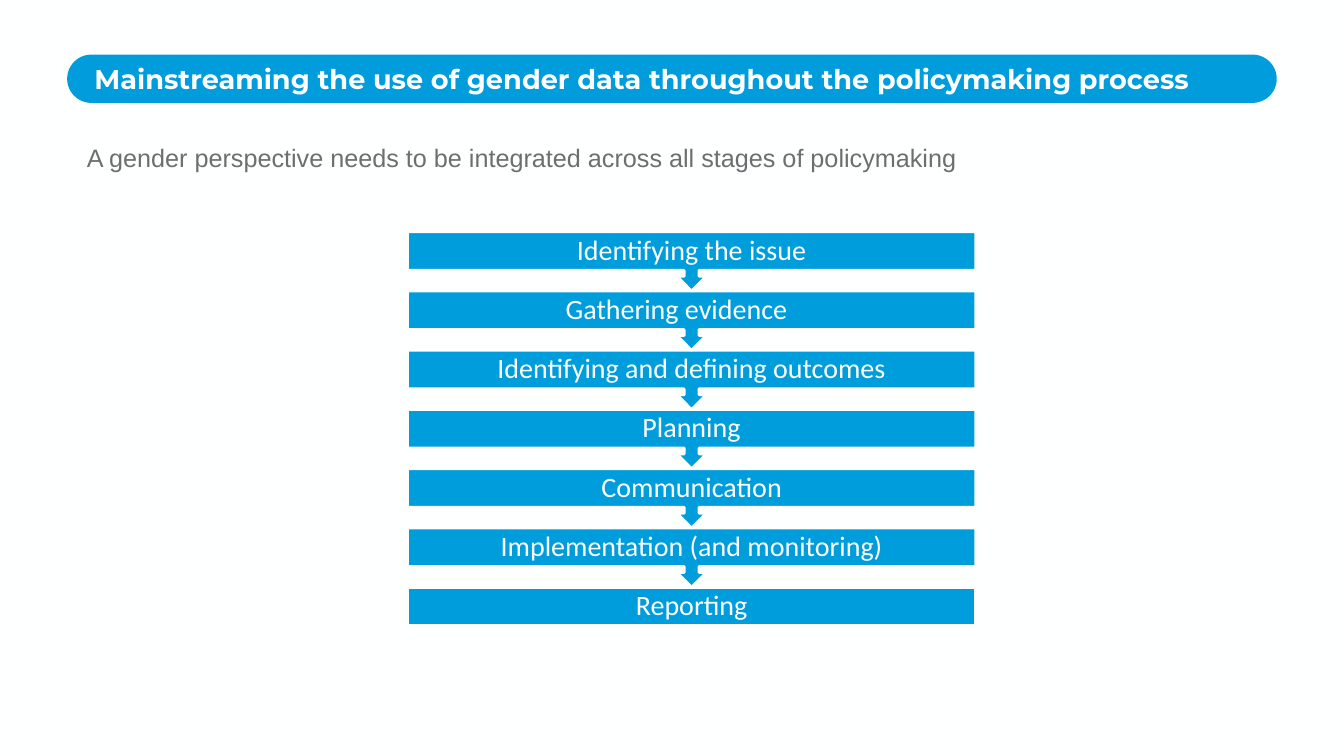
from dataclasses import dataclass

from pptx import Presentation
from pptx.dml.color import RGBColor
from pptx.enum.shapes import MSO_SHAPE
from pptx.enum.text import MSO_ANCHOR, PP_ALIGN
from pptx.util import Pt


@dataclass(frozen=True)
class Theme:
    """Colours, fonts and type sizes of the slide."""
    white: RGBColor = RGBColor(0xFE, 0xFF, 0xFF)
    bar: RGBColor = RGBColor(0x00, 0x9C, 0xDB)
    step: RGBColor = RGBColor(0x00, 0x9D, 0xDC)
    grey: RGBColor = RGBColor(0x6D, 0x6E, 0x70)
    title_font: str = "Montserrat"
    body_font: str = "Arial"
    step_font: str = "Calibri"
    title_size: float = 19.4
    body_size: float = 18
    step_size: float = 20
    outline: float = 2


THEME = Theme()
STEPS = [
    "Identifying the issue",
    "Gathering evidence \t",
    "Identifying and defining outcomes",
    "Planning",
    "Communication",
    "Implementation (and monitoring)",
    "Reporting",
]


def set_text(sp, text, font, size, color, align=PP_ALIGN.LEFT, inset=0, bold=False):
    """Write one paragraph into a shape and return it."""
    tf = sp.text_frame
    tf.word_wrap = True
    tf.vertical_anchor = MSO_ANCHOR.MIDDLE
    tf.margin_left = tf.margin_right = Pt(inset)
    tf.margin_top = tf.margin_bottom = 0
    p = tf.paragraphs[0]
    p.add_run().text = text
    p.alignment = align
    p.font.name, p.font.size, p.font.bold = font, Pt(size), bold
    p.font.color.rgb = color
    return p


def add_filled(s, kind, box, fill):
    """Add a flat, filled preset shape without a line."""
    sp = s.shapes.add_shape(kind, *map(Pt, box))
    sp.shadow.inherit = False
    sp.fill.solid()
    sp.fill.fore_color.rgb = fill
    sp.line.fill.background()
    return sp


def add_title_bar(s, box, text):
    """Draw the rounded title bar."""
    sp = add_filled(s, MSO_SHAPE.ROUNDED_RECTANGLE, box, THEME.bar)
    sp.adjustments[0] = 0.5
    set_text(sp, text, THEME.title_font, THEME.title_size, THEME.white,
             inset=14.4, bold=True)


def add_subtitle(s, box, text):
    """Place the statement under the title."""
    sp = s.shapes.add_textbox(*map(Pt, box))
    set_text(sp, text, THEME.body_font, THEME.body_size, THEME.grey)


def add_process(s, box, steps, body_share=0.65):
    """Stack the steps, each pointing down to the next one."""
    left, top, width, height = box
    pitch = height / (len(steps) - 1 + body_share)
    last = len(steps) - 1
    for i, step in reversed(list(enumerate(steps))):
        kind, share = ((MSO_SHAPE.RECTANGLE, body_share) if i == last
                       else (MSO_SHAPE.DOWN_ARROW_CALLOUT, 1))
        sp = add_filled(s, kind, (left, top + i * pitch, width, pitch * share), THEME.step)
        sp.line.color.rgb = THEME.white
        sp.line.width = Pt(THEME.outline)
        p = set_text(sp, step, THEME.step_font, THEME.step_size, THEME.white,
                     PP_ALIGN.CENTER, inset=11.2)
        p.line_spacing = 0.9


def main():
    """Build and save the slide."""
    prs = Presentation()
    prs.slide_width, prs.slide_height = Pt(960), Pt(540)
    s = prs.slides.add_slide(prs.slide_layouts[6])
    s.background.fill.solid()
    s.background.fill.fore_color.rgb = THEME.white
    add_title_bar(s, (48, 39, 864, 34.5),
                  "Mainstreaming the use of gender data throughout the policymaking process")
    add_subtitle(s, (62, 101.5, 836, 22),
                 "A gender perspective needs to be integrated across all stages of policymaking")
    add_process(s, (291, 165.6, 406, 281.4), STEPS)
    prs.save("out.pptx")


if __name__ == "__main__":
    main()
